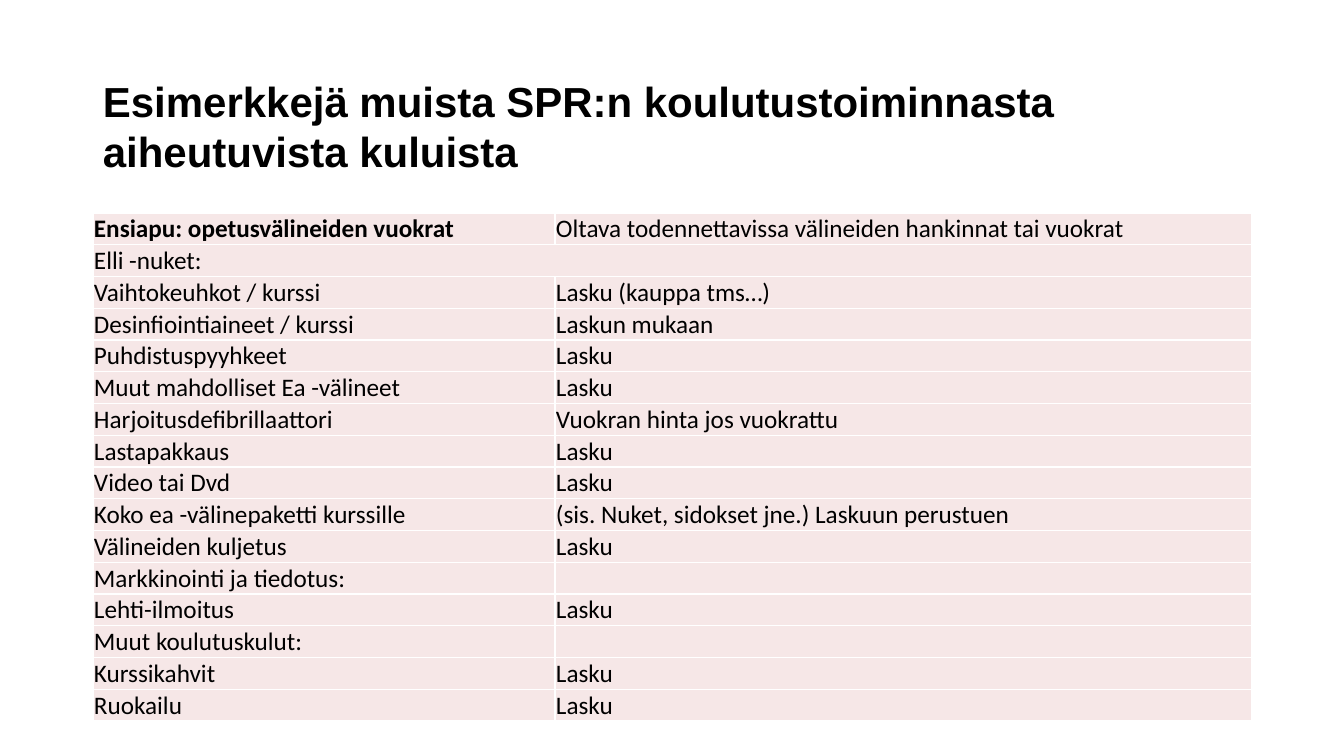
import pptx
import pptx.util
import pptx.dml.color
import pptx.enum.text
import lxml.etree
import pptx.oxml.ns

# Content
HEADING = "Esimerkkejä muista SPR:n koulutustoiminnasta aiheutuvista kuluista"
COSTS = [
    ("Ensiapu: opetusvälineiden vuokrat", "Oltava todennettavissa välineiden hankinnat tai vuokrat"),
    ("Elli -nuket:", None),  # None: the first cell spans both columns
    ("Vaihtokeuhkot / kurssi", "Lasku (kauppa tms…)"),
    ("Desinfiointiaineet / kurssi", "Laskun mukaan"),
    ("Puhdistuspyyhkeet", "Lasku"),
    ("Muut mahdolliset Ea -välineet", "Lasku"),
    ("Harjoitusdefibrillaattori", "Vuokran hinta jos vuokrattu"),
    ("Lastapakkaus", "Lasku"),
    ("Video tai Dvd", "Lasku"),
    ("Koko ea -välinepaketti kurssille", "(sis. Nuket, sidokset jne.) Laskuun perustuen"),
    ("Välineiden kuljetus", "Lasku"),
    ("Markkinointi ja tiedotus:", ""),
    ("Lehti-ilmoitus", "Lasku"),
    ("Muut koulutuskulut:", ""),
    ("Kurssikahvit", "Lasku"),
    ("Ruokailu", "Lasku"),
]

# Look and measures, in px
BLACK = pptx.dml.color.RGBColor(0x00, 0x00, 0x00)
WHITE = pptx.dml.color.RGBColor(0xFF, 0xFF, 0xFF)
PINK = pptx.dml.color.RGBColor(0xF6, 0xE7, 0xE7)
EMU_PER_PX = 914400 / 100.8
SLIDE_WIDTH, SLIDE_HEIGHT = 1344, 756
LEFT = 93
COLUMN_WIDTHS = (462, 697)
HEADING_TOP, HEADING_HEIGHT = 83, 86
COSTS_TOP, COSTS_HEIGHT = 213, 508
CELL_INSET = 1


def px(length):
    return pptx.util.Emu(round(length * EMU_PER_PX))


def style(paragraph, font_name, size, bold):
    for run in paragraph.runs:
        run.font.name = font_name
        run.font.size = pptx.util.Pt(size)
        run.font.bold = bold
        run.font.color.rgb = BLACK


def add_borders(cell):
    properties = cell._tc.get_or_add_tcPr()
    for position, side in enumerate(("lnL", "lnR", "lnT", "lnB")):
        line = lxml.etree.Element(pptx.oxml.ns.qn(f"a:{side}"), w=str(pptx.util.Pt(1)))
        fill = lxml.etree.SubElement(line, pptx.oxml.ns.qn("a:solidFill"))
        lxml.etree.SubElement(fill, pptx.oxml.ns.qn("a:srgbClr"), val=str(WHITE))
        properties.insert(position, line)


def add_heading(slide):
    heading = slide.shapes.add_textbox(
        px(LEFT), px(HEADING_TOP), px(sum(COLUMN_WIDTHS)), px(HEADING_HEIGHT))
    frame = heading.text_frame
    frame.word_wrap = True
    frame.vertical_anchor = pptx.enum.text.MSO_ANCHOR.MIDDLE
    frame.text = HEADING
    style(frame.paragraphs[0], "Arial", 30, True)


def add_costs(slide):
    costs = slide.shapes.add_table(
        len(COSTS), len(COLUMN_WIDTHS), px(LEFT), px(COSTS_TOP),
        px(sum(COLUMN_WIDTHS)), px(COSTS_HEIGHT)).table
    costs.first_row = False
    costs.horz_banding = False
    for column, width in zip(costs.columns, COLUMN_WIDTHS):
        column.width = px(width)
    for row_index, entry in enumerate(COSTS):
        costs.rows[row_index].height = px(COSTS_HEIGHT / len(COSTS))
        for column_index, text in enumerate(entry):
            cell = costs.cell(row_index, column_index)
            cell.margin_left = cell.margin_right = cell.margin_top = px(CELL_INSET)
            cell.margin_bottom = 0
            cell.vertical_anchor = pptx.enum.text.MSO_ANCHOR.BOTTOM
            cell.fill.solid()
            cell.fill.fore_color.rgb = PINK
            add_borders(cell)
            if text:
                cell.text_frame.text = text
                style(cell.text_frame.paragraphs[0], "Calibri", 18,
                      row_index == column_index == 0)
        if entry[1] is None:
            costs.cell(row_index, 0).merge(costs.cell(row_index, 1))


def main():
    presentation = pptx.Presentation()
    presentation.slide_width = px(SLIDE_WIDTH)
    presentation.slide_height = px(SLIDE_HEIGHT)
    slide = presentation.slides.add_slide(presentation.slide_layouts[6])
    add_heading(slide)
    add_costs(slide)
    presentation.save("out.pptx")


if __name__ == "__main__":
    main()
